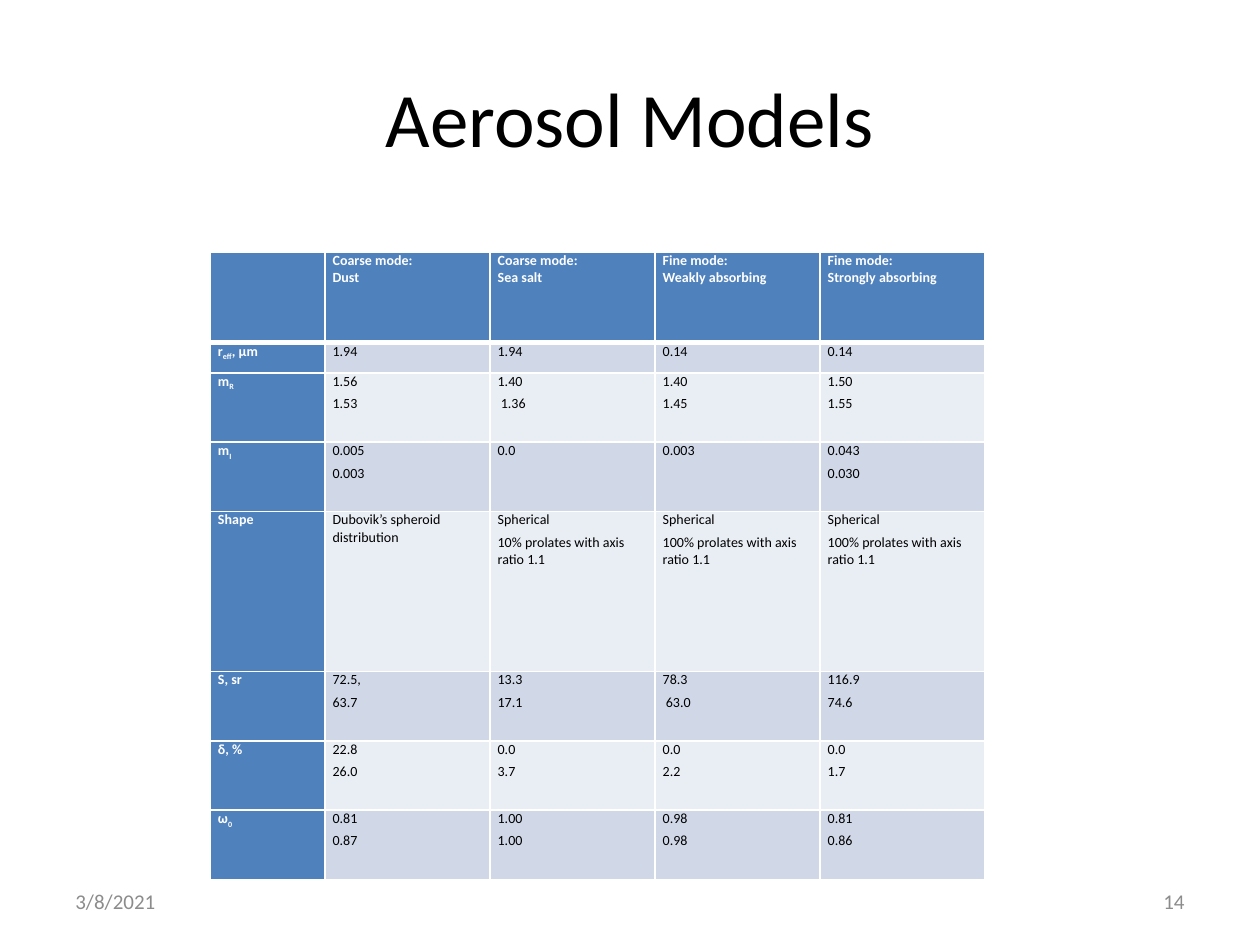
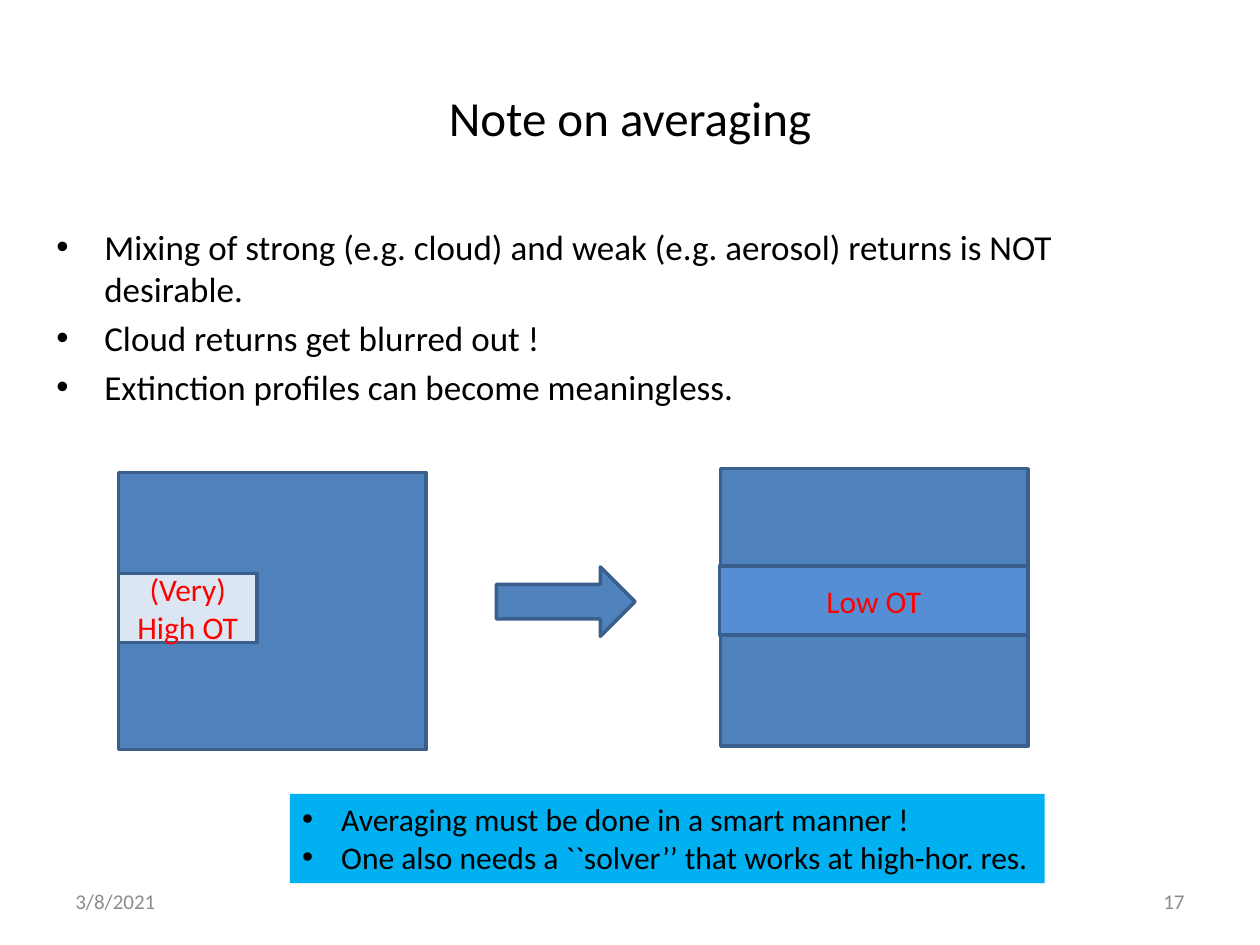
from typing import NamedTuple

from lxml import etree
from pptx import Presentation
from pptx.dml.color import RGBColor
from pptx.enum.shapes import MSO_SHAPE as Preset
from pptx.enum.text import MSO_ANCHOR as Anchor, MSO_AUTO_SIZE as AutoSize, PP_ALIGN as Align
from pptx.oxml.ns import qn
from pptx.util import Emu, Inches, Pt

WHITE = RGBColor(0xFF, 0xFF, 0xFF)
BLACK = RGBColor(0x00, 0x00, 0x00)
GREY = RGBColor(0x8C, 0x8C, 0x8C)
RED = RGBColor(0xFF, 0x00, 0x00)
BLUE = RGBColor(0x4F, 0x81, 0xBD)
DARK_BLUE = RGBColor(0x3A, 0x5F, 0x8C)
MID_BLUE = RGBColor(0x55, 0x8E, 0xD5)
ICE_BLUE = RGBColor(0xDC, 0xE6, 0xF2)
CYAN = RGBColor(0x00, 0xB0, 0xF0)
BANDS = (RGBColor(0xD0, 0xD8, 0xE8), RGBColor(0xE9, 0xED, 0xF4))

FONT = "Calibri"
DATE = "3/8/2021"
SLIDE_WIDTH, SLIDE_HEIGHT = Inches(10), Inches(7.5)
COLUMN, ROW = SLIDE_WIDTH / 100, SLIDE_HEIGHT / 75
TITLE_ONLY = 5


class Frame(NamedTuple):
    """A place on the grid of 100 columns and 75 rows."""
    left: float
    top: float
    width: float
    height: float

    def lengths(self) -> tuple[Emu, Emu, Emu, Emu]:
        return (Emu(round(self.left * COLUMN)), Emu(round(self.top * ROW)),
                Emu(round(self.width * COLUMN)), Emu(round(self.height * ROW)))


class Block(NamedTuple):
    frame: Frame
    fill: RGBColor
    label: str = ""
    preset: Preset = Preset.RECTANGLE


TITLE = Frame(5, 3, 90, 12.5)
DATE_FRAME = Frame(5, 69.5, 23.3, 4)
NUMBER_FRAME = DATE_FRAME._replace(left=71.7)

MODEL_TABLE = Frame(16.7, 20, 61.5, 49.8)
MODEL_COLUMNS = (9.1, 13.1, 13.1, 13.1, 13.1)
MODEL_ROWS = (7.2, 2.4, 5.5, 5.5, 12.7, 5.5, 5.5, 5.5)
# Underscores enclose subscripts; line breaks separate paragraphs.
MODELS = (
    ("", "Coarse mode:\nDust", "Coarse mode:\nSea salt",
     "Fine mode:\nWeakly absorbing", "Fine mode:\nStrongly absorbing"),
    ("r_eff_, µm", "1.94", "1.94", "0.14", "0.14"),
    ("m_R_", "1.56\n1.53", "1.40\n 1.36", "1.40\n1.45", "1.50\n1.55"),
    ("m_I_", "0.005\n0.003", "0.0", "0.003", "0.043\n0.030"),
    ("Shape", "Dubovik’s spheroid distribution",
     "Spherical\n10% prolates with axis ratio 1.1",
     "Spherical\n100% prolates with axis ratio 1.1",
     "Spherical\n100% prolates with axis ratio 1.1"),
    ("S, sr", "72.5,\n63.7", "13.3\n17.1", "78.3\n 63.0", "116.9\n74.6"),
    ("δ, %", "22.8\n26.0", "0.0\n3.7", "0.0\n2.2", "0.0\n1.7"),
    ("ω_0_", "0.81\n0.87", "1.00\n1.00", "0.98\n0.98", "0.81\n0.86"),
)

NOTES = ("Mixing of strong (e.g. cloud) and weak (e.g. aerosol) returns is NOT desirable.",
         "Cloud returns get blurred out !",
         "Extinction profiles can become meaningless.")
ADVICE = ("Averaging must be done in a smart manner !",
          "One also needs a ``solver’’ that works at high-hor. res.")
BLOCKS = (
    Block(Frame(9.4, 37.5, 24.4, 22), BLUE),
    Block(Frame(9.4, 45.5, 11, 5.5), ICE_BLUE, "(Very) High OT"),
    Block(Frame(39.4, 45, 11, 5.5), BLUE, preset=Preset.RIGHT_ARROW),
    Block(Frame(57.2, 37.2, 24.4, 22), BLUE),
    Block(Frame(57.1, 44.9, 24.5, 5.5), MID_BLUE, "Low OT"),
)


def style(para, size: float, color: RGBColor, align=Align.LEFT, bold: bool = False) -> None:
    para.alignment = align
    para.font.name, para.font.size = FONT, Pt(size)
    para.font.color.rgb, para.font.bold = color, bold


def add_page(deck, title: str, title_size: float, number: int):
    """Add a slide with its title, date and page number."""
    page = deck.slides.add_slide(deck.slide_layouts[TITLE_ONLY])
    heading = page.shapes.title
    heading.left, heading.top, heading.width, heading.height = TITLE.lengths()
    heading.text_frame.text = title
    heading.text_frame.vertical_anchor = Anchor.MIDDLE
    style(heading.text_frame.paragraphs[0], title_size, BLACK, Align.CENTER)
    for frame, text, align in ((DATE_FRAME, DATE, Align.LEFT),
                               (NUMBER_FRAME, str(number), Align.RIGHT)):
        body = page.shapes.add_textbox(*frame.lengths()).text_frame
        body.word_wrap = True
        body.vertical_anchor = Anchor.MIDDLE
        body.text = text
        style(body.paragraphs[0], 12, GREY, align)
    return page


def add_borders(cell, top: float, bottom: float) -> None:
    properties = cell._tc.get_or_add_tcPr()
    for side, width in (("L", 1), ("R", 1), ("T", top), ("B", bottom)):
        line = etree.SubElement(properties, qn(f"a:ln{side}"), w=str(Pt(width)))
        fill = etree.SubElement(line, qn("a:solidFill"))
        etree.SubElement(fill, qn("a:srgbClr"), val=str(WHITE))


def add_spans(para, text: str) -> None:
    """Write text whose parts between underscores are subscripts."""
    for index, part in enumerate(text.split("_")):
        if part:
            span = para.add_run()
            span.text = part
            if index % 2:
                span._r.get_or_add_rPr().set("baseline", "-25000")


def fill_cell(cell, text: str, row: int, column: int) -> None:
    is_header = row == 0 or column == 0
    add_borders(cell, top=3 if row == 1 else 1, bottom=3 if row == 0 else 1)
    cell.fill.solid()
    cell.fill.fore_color.rgb = BLUE if is_header else BANDS[(row - 1) % 2]
    cell.margin_left = cell.margin_right = Inches(0.06)
    cell.margin_top = cell.margin_bottom = 0
    if not text:
        return
    body = cell.text_frame
    align = Align.LEFT if MODELS[row][0] == "Shape" else Align.JUSTIFY
    for index, line in enumerate(text.split("\n")):
        para = body.add_paragraph() if index else body.paragraphs[0]
        add_spans(para, line)
        style(para, 8, WHITE if is_header else BLACK, align, is_header)
        para.space_after = Pt(3 if row else 0)


def add_models(page) -> None:
    table = page.shapes.add_table(len(MODEL_ROWS), len(MODEL_COLUMNS),
                                  *MODEL_TABLE.lengths()).table
    table.first_col = True
    for column, width in zip(table.columns, MODEL_COLUMNS):
        column.width = Emu(round(width * COLUMN))
    for row, height in zip(table.rows, MODEL_ROWS):
        row.height = Emu(round(height * ROW))
    for row, texts in enumerate(MODELS):
        for column, text in enumerate(texts):
            fill_cell(table.cell(row, column), text, row, column)


def add_bullets(page, frame: Frame, lines: tuple[str, ...], size: float,
                indent: float, gap: float = 0):
    box = page.shapes.add_textbox(*frame.lengths())
    body = box.text_frame
    body.word_wrap = True
    for index, line in enumerate(lines):
        para = body.add_paragraph() if index else body.paragraphs[0]
        para.text = line
        properties = para._p.get_or_add_pPr()
        properties.set("marL", str(Inches(indent)))
        properties.set("indent", str(-Inches(indent)))
        etree.SubElement(properties, qn("a:buFont"), typeface="Arial")
        etree.SubElement(properties, qn("a:buChar"), char="•")
        style(para, size, BLACK)
        para.space_before = Pt(gap if index else 0)
    return box


def add_block(page, block: Block) -> None:
    shape = page.shapes.add_shape(block.preset, *block.frame.lengths())
    shape.shadow.inherit = False
    shape.fill.solid()
    shape.fill.fore_color.rgb = block.fill
    shape.line.color.rgb, shape.line.width = DARK_BLUE, Pt(2)
    if block.label:
        body = shape.text_frame
        body.word_wrap = True
        body.vertical_anchor = Anchor.MIDDLE
        body.text = block.label
        style(body.paragraphs[0], 18, RED, Align.CENTER)


def main() -> None:
    deck = Presentation()
    deck.slide_width, deck.slide_height = SLIDE_WIDTH, SLIDE_HEIGHT

    add_models(add_page(deck, "Aerosol Models", 44, 14))

    averaging = add_page(deck, "Note on averaging", 28, 17)
    add_bullets(averaging, Frame(3.5, 17.4, 90, 49.5), NOTES, 20, 0.38, gap=4)
    for block in BLOCKS:
        add_block(averaging, block)
    advice = add_bullets(averaging, Frame(23, 63, 59.9, 7.1), ADVICE, 18, 0.31)
    advice.fill.solid()
    advice.fill.fore_color.rgb = CYAN
    advice.text_frame.word_wrap = False
    advice.text_frame.auto_size = AutoSize.SHAPE_TO_FIT_TEXT

    deck.save("out.pptx")


if __name__ == "__main__":
    main()
